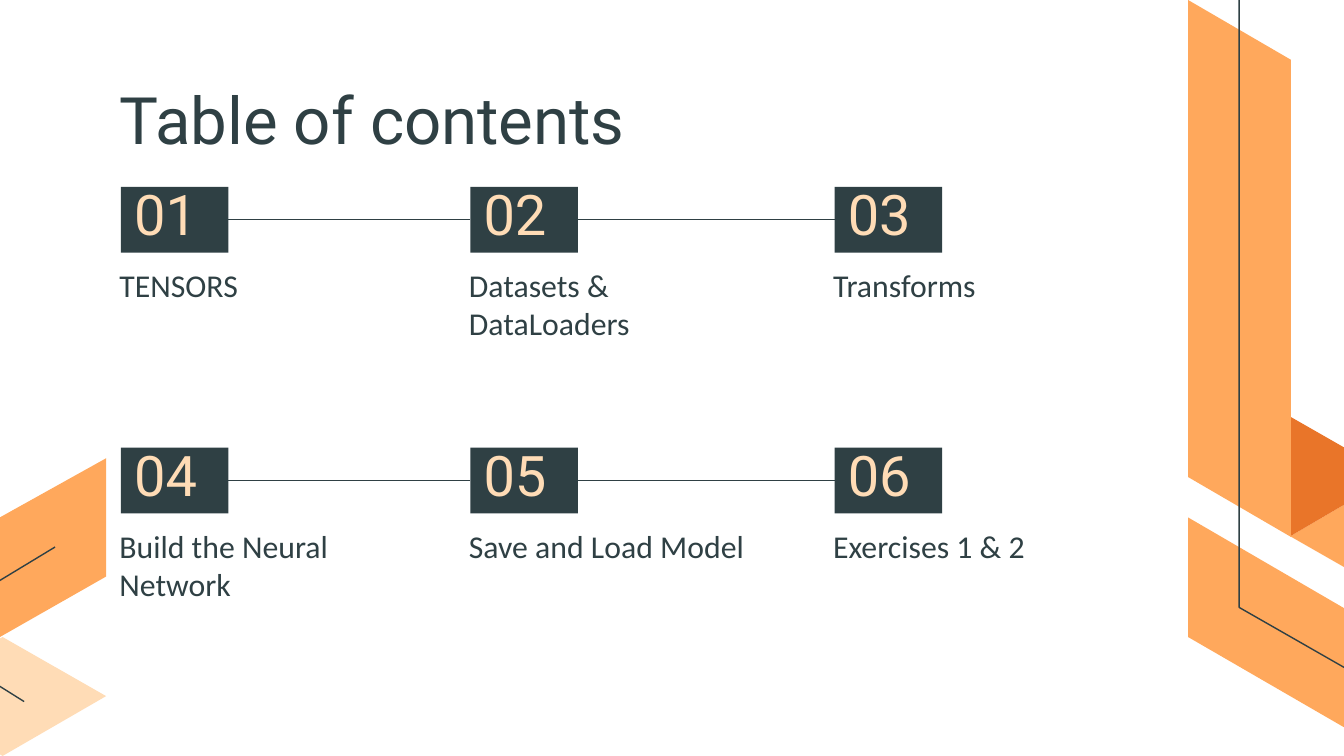
from typing import NamedTuple

from lxml.etree import SubElement
from pptx import Presentation
from pptx.dml.color import RGBColor
from pptx.enum.shapes import MSO_CONNECTOR, MSO_SHAPE
from pptx.enum.text import MSO_ANCHOR, MSO_AUTO_SIZE, PP_ALIGN
from pptx.oxml.ns import qn
from pptx.util import Emu, Pt

SCALE = 4572
DARK, CREAM, LIGHT, DEEP = "2F4044", "FFDCB6", "FFA85C", "E97529"
COLS, ROWS = (180, 700, 1242), (278, 666)
BOX_W, BOX_H = 160, 98
INSET = 20


class Topic(NamedTuple):
    mark: str
    name: str


class Band(NamedTuple):
    points: tuple
    fill: str | None = None


class Style(NamedTuple):
    size: int
    font: str
    color: str
    top: int
    anchor: MSO_ANCHOR


TITLE = Style(35, "Roboto", DARK, 0, MSO_ANCHOR.TOP)
MARK = Style(30, "Roboto", CREAM, 0, MSO_ANCHOR.MIDDLE)
NAME = Style(17, "Calibri", DARK, INSET, MSO_ANCHOR.TOP)

TOPICS = (
    Topic("01", "TENSORS"),
    Topic("02", "Datasets & DataLoaders"),
    Topic("03", "Transforms"),
    Topic("04", "Build the Neural Network"),
    Topic("05", "Save and Load Model"),
    Topic("06", "Exercises 1 & 2"),
)

LEFT = (
    Band(((0, 770), (158, 682), (158, 858), (0, 948)), LIGHT),
    Band(((4, 1125), (-150, 1036), (4, 948), (158, 1036)), CREAM),
    Band(((36, 1044), (-60, 984), (-60, 900), (82, 814))),
)

RIGHT = (
    Band(((2074, 886), (2228, 798), (2074, 708), (1920, 798)), LIGHT),
    Band(((2074, 708), (1920, 798), (1920, 620)), DEEP),
    Band(((1768, 0), (1768, 710), (1921, 799), (1921, 89)), LIGHT),
    Band(((1768, 948), (1768, 770), (2074, 948), (2074, 1125)), LIGHT),
    Band(((1844, 0), (1844, 904), (2166, 1088))),
)


def px(n: int) -> Emu:
    return Emu(n * SCALE)


def rgb(code: str) -> RGBColor:
    return RGBColor.from_string(code)


def write(shape, text: str, style: Style) -> None:
    frame = shape.text_frame
    frame.word_wrap = True
    frame.auto_size = MSO_AUTO_SIZE.NONE
    frame.vertical_anchor = style.anchor
    frame.margin_left = frame.margin_right = frame.margin_bottom = px(INSET)
    frame.margin_top = px(style.top)
    para = frame.paragraphs[0]
    para.alignment = PP_ALIGN.LEFT
    run = para.add_run()
    run.text = text
    run.font.size = Pt(style.size)
    run.font.name = style.font
    run.font.color.rgb = rgb(style.color)


def draw_band(slide, band: Band) -> None:
    first, *rest = band.points
    pen = slide.shapes.build_freeform(*first, scale=SCALE)
    pen.add_line_segments(rest, close=band.fill is not None)
    shape = pen.convert_to_shape()
    shape.shadow.inherit = False
    if band.fill:
        shape.fill.solid()
        shape.fill.fore_color.rgb = rgb(band.fill)
        shape.line.fill.background()
    else:
        shape.fill.background()
        shape.line.color.rgb = rgb(DARK)
        shape.line.width = Pt(0.75)


def draw_topic(slide, topic: Topic, left: int, top: int) -> None:
    box = slide.shapes.add_shape(
        MSO_SHAPE.RECTANGLE, px(left), px(top), px(BOX_W), px(BOX_H))
    box.shadow.inherit = False
    box.fill.solid()
    box.fill.fore_color.rgb = rgb(DARK)
    box.line.fill.background()
    write(box, topic.mark, MARK)
    label = slide.shapes.add_textbox(
        px(left - 22), px(top + BOX_H), px(452), px(84))
    write(label, topic.name, NAME)


def draw_link(slide, start: int, end: int, y: int) -> None:
    link = slide.shapes.add_connector(
        MSO_CONNECTOR.STRAIGHT, px(start), px(y), px(end), px(y))
    link.line.color.rgb = rgb(DARK)
    link.line.width = Pt(0.75)
    SubElement(link.element.spPr, qn("a:effectLst"))


def main() -> None:
    deck = Presentation()
    deck.slide_width, deck.slide_height = px(2000), px(1125)
    slide = deck.slides.add_slide(deck.slide_layouts[5])
    for band in LEFT:
        draw_band(slide, band)
    title = slide.shapes.title
    title.left, title.top = px(158), px(118)
    title.width, title.height = px(1550), px(114)
    write(title, "Table of contents", TITLE)
    spots = [(x, y) for y in ROWS for x in COLS]
    for topic, spot in zip(TOPICS, spots):
        draw_topic(slide, topic, *spot)
    for y in ROWS:
        for start, end in zip(COLS, COLS[1:]):
            draw_link(slide, start + BOX_W, end, y + BOX_H // 2)
    for band in RIGHT:
        draw_band(slide, band)
    deck.save("out.pptx")


if __name__ == "__main__":
    main()
